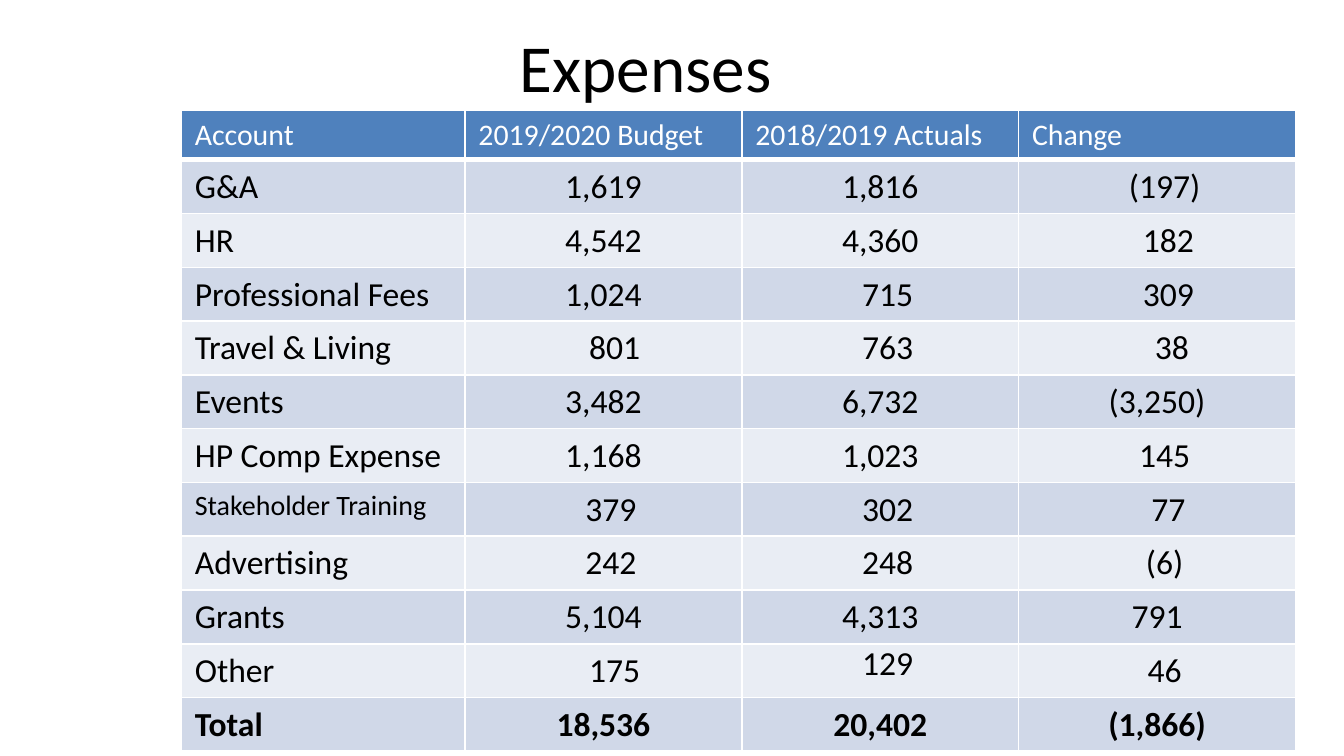
from dataclasses import dataclass

from lxml.etree import SubElement
from pptx import Presentation
from pptx.dml.color import RGBColor
from pptx.enum.text import MSO_ANCHOR, PP_ALIGN
from pptx.oxml.ns import qn
from pptx.util import Inches, Pt


@dataclass(frozen=True)
class Theme:
    font: str = "Calibri"
    text: str = "000000"
    white: str = "FFFFFF"
    header: str = "4F81BD"
    bands: tuple = ("D0D8E8", "E9EDF4")
    title_size: int = 36
    header_size: int = 16
    body_size: int = 18
    small_size: int = 15


THEME = Theme()
HEADERS = ["Account", "2019/2020 Budget", "2018/2019 Actuals", "Change"]
# Each row: account, its three figures, and the indent steps of those figures
EXPENSES = [
    ("G&A", ("1,619", "1,816", "(197)"), (0, 0, 2)),
    ("HR", ("4,542", "4,360", "182"), (0, 0, 3)),
    ("Professional Fees", ("1,024", "715", "309"), (0, 2, 3)),
    ("Travel & Living", ("801", "763", "38"), (3, 2, 4)),
    ("Events", ("3,482", "6,732", "(3,250)"), (0, 0, 0)),
    ("HP Comp Expense", ("1,168", "1,023", "145"), (0, 0, 2)),
    ("Stakeholder Training", ("379", "302", "77"), (2, 2, 3)),
    ("Advertising", ("242", "248", "(6)"), (2, 2, 2)),
    ("Grants", ("5,104", "4,313", "791"), (0, 0, 0)),
    ("Other", ("175", "129", "46"), (3, 2, 2)),
    ("Total", ("18,536", "20,402", "(1,866)"), (0, 0, 0)),
]
COLUMN_WIDTHS = (2.11, 2.06, 2.06, 2.06)
HEADER_HEIGHT, ROW_HEIGHT = 0.37, 0.4
INDENT_STEP = Pt(4)


def add_run(p, text, size, color, bold=False):
    r = p.add_run()
    r.text = text
    r.font.name = THEME.font
    r.font.size = Pt(size)
    r.font.bold = bold
    r.font.color.rgb = RGBColor.from_string(color)


def set_header_borders(cell):
    """Draw white lines on all four sides; call before the cell is filled."""
    tc_pr = cell._tc.get_or_add_tcPr()
    for side, width in (("L", 1), ("R", 1), ("T", 1), ("B", 3)):
        line = SubElement(tc_pr, qn(f"a:ln{side}"), w=str(Pt(width)))
        fill = SubElement(line, qn("a:solidFill"))
        SubElement(fill, qn("a:srgbClr"), val=THEME.white)


def fill_cell(cell, text, size, color, fill, align=PP_ALIGN.LEFT, bold=False):
    cell.fill.solid()
    cell.fill.fore_color.rgb = RGBColor.from_string(fill)
    cell.margin_bottom = Inches(0.04)
    p = cell.text_frame.paragraphs[0]
    p.alignment = align
    add_run(p, text, size, color, bold)


def add_title(slide, text):
    title = slide.shapes.title
    title.left, title.top = Inches(2.31), Inches(0.14)
    title.width, title.height = Inches(4.99), Inches(0.71)
    tf = title.text_frame
    tf.vertical_anchor = MSO_ANCHOR.TOP
    p = tf.paragraphs[0]
    p.alignment = PP_ALIGN.CENTER
    add_run(p, text, THEME.title_size, THEME.text)


def add_expense_table(slide):
    height = HEADER_HEIGHT + ROW_HEIGHT * len(EXPENSES)
    table = slide.shapes.add_table(
        len(EXPENSES) + 1, len(HEADERS), Inches(1.35), Inches(0.82),
        Inches(sum(COLUMN_WIDTHS)), Inches(height)).table
    for column, width in zip(table.columns, COLUMN_WIDTHS):
        column.width = Inches(width)
    for i, row in enumerate(table.rows):
        row.height = Inches(ROW_HEIGHT if i else HEADER_HEIGHT)

    for col, text in enumerate(HEADERS):
        cell = table.cell(0, col)
        set_header_borders(cell)
        fill_cell(cell, text, THEME.header_size, THEME.white, THEME.header)

    for row, (account, figures, steps) in enumerate(EXPENSES, 1):
        band = THEME.bands[(row - 1) % 2]
        bold = account == "Total"
        size = THEME.small_size if len(account) > 18 else THEME.body_size
        fill_cell(table.cell(row, 0), account, size, THEME.text, band, bold=bold)
        for col, (figure, step) in enumerate(zip(figures, steps), 1):
            cell = table.cell(row, col)
            fill_cell(cell, figure, THEME.body_size, THEME.text, band,
                      PP_ALIGN.CENTER, bold)
            cell.margin_left = Inches(0.1) + step * INDENT_STEP

    other_actuals = table.cell(len(EXPENSES) - 1, 2)
    other_actuals.margin_top = other_actuals.margin_bottom = 0


def main():
    prs = Presentation()
    prs.slide_width = Inches(10)
    prs.slide_height = prs.slide_width * 9 // 16
    slide = prs.slides.add_slide(prs.slide_layouts[5])
    add_title(slide, "Expenses")
    add_expense_table(slide)
    prs.save("out.pptx")


if __name__ == "__main__":
    main()
